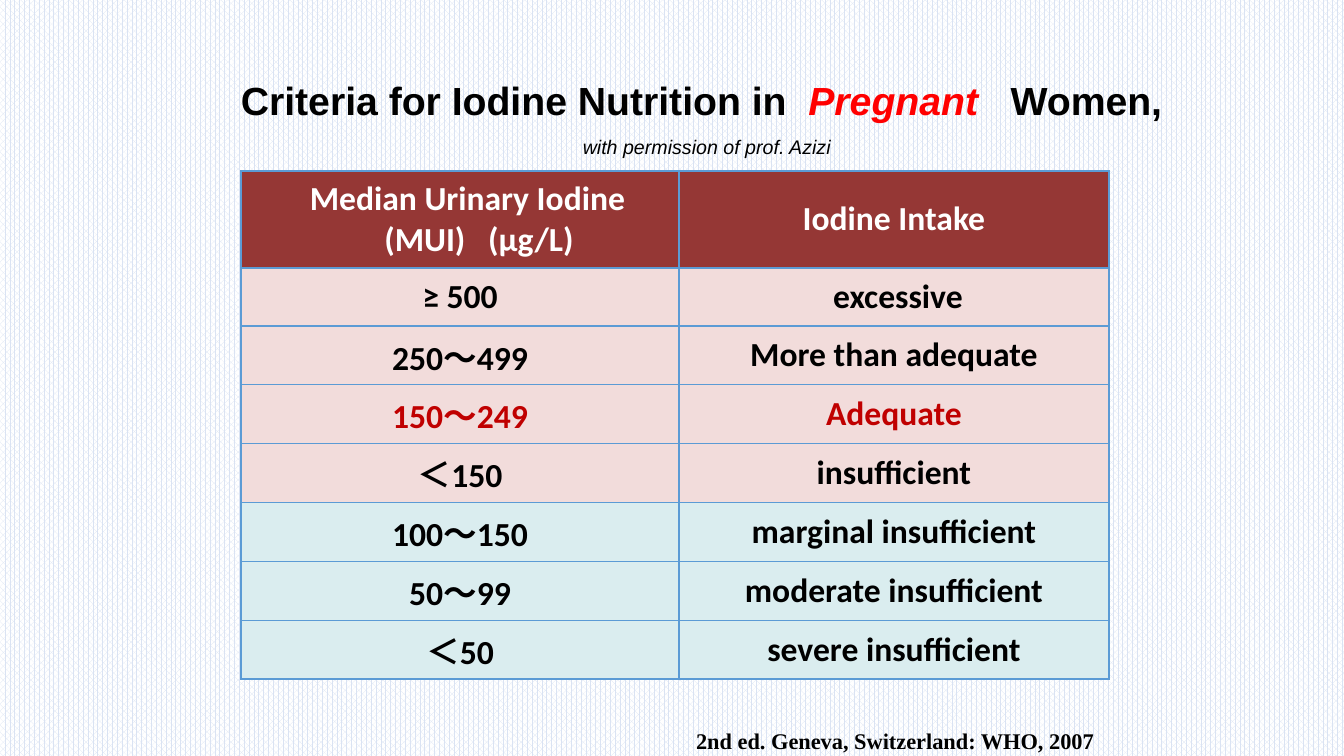
from lxml.etree import SubElement
from pptx import Presentation
from pptx.dml.color import RGBColor
from pptx.enum.dml import MSO_PATTERN
from pptx.enum.text import MSO_ANCHOR, MSO_AUTO_SIZE, PP_ALIGN
from pptx.oxml.ns import qn
from pptx.util import Pt

COLORS = {
    "black": "000000", "white": "FFFFFF", "red": "FF0000", "crimson": "C00000",
    "stripe": "DAE3F3", "header": "953735", "pink": "F2DCDB", "teal": "DAEDEF",
    "border": "5B9BD5",
}
HANG = 38
ROWS = [
    ("≥ 500", "excessive", "pink", "black", (0, 0), (HANG, -30)),
    ("250～499", "More than adequate", "pink", "black", (0, 0), (HANG, -HANG)),
    ("150～249", "Adequate", "pink", "crimson", (0, 0), (HANG, -HANG)),
    ("＜150", "insufficient", "pink", "black", (0, 0), (HANG, -HANG)),
    ("100～150", "marginal insufficient", "teal", "black", (0, 0), (HANG, -HANG)),
    ("50～99", "moderate insufficient", "teal", "black", (HANG, -HANG), (HANG, -HANG)),
    ("＜50", "severe insufficient", "teal", "black", (HANG, -HANG), (HANG, -HANG)),
]
HEADER = ("Median Urinary Iodine (MUI)   (µg/L)", "Iodine Intake",
          "header", "white", (HANG, -23), (HANG, -HANG))


def px(n):
    return round(n * 914400 / 100.8)


def rgb(name):
    return RGBColor.from_string(COLORS[name])


class SlideBuilder:
    """Draws styled elements on one slide."""

    def __init__(self, prs):
        self.s = prs.slides.add_slide(prs.slide_layouts[6])

    def background(self):
        fill = self.s.background.fill
        fill.patterned()
        fill.pattern = MSO_PATTERN.PERCENT_70
        fill.fore_color.rgb = rgb("stripe")
        fill.back_color.rgb = rgb("white")

    def run(self, p, text, font, size, color="black", bold=True, italic=False):
        r = p.add_run()
        r.text = text
        r.font.name = font
        r.font.size = Pt(size)
        r.font.bold = bold
        r.font.italic = italic
        r.font.color.rgb = rgb(color)

    def text(self, box, paragraphs, align, spacing=None):
        tf = self.s.shapes.add_textbox(*map(px, box)).text_frame
        tf.word_wrap = True
        tf.auto_size = MSO_AUTO_SIZE.SHAPE_TO_FIT_TEXT
        for i, runs in enumerate(paragraphs):
            p = tf.add_paragraph() if i else tf.paragraphs[0]
            p.alignment = align
            p.line_spacing = spacing
            for args in runs:
                self.run(p, *args)

    def cell(self, cell, text, fill, color, indent):
        cell.vertical_anchor = MSO_ANCHOR.MIDDLE
        tcPr = cell._tc.get_or_add_tcPr()
        for side in ("lnL", "lnR", "lnT", "lnB"):
            ln = SubElement(tcPr, qn(f"a:{side}"), w=str(Pt(1)))
            solid = SubElement(ln, qn("a:solidFill"))
            SubElement(solid, qn("a:srgbClr"), val=COLORS["border"])
        cell.fill.solid()
        cell.fill.fore_color.rgb = rgb(fill)
        p = cell.text_frame.paragraphs[0]
        p.alignment = PP_ALIGN.CENTER
        pPr = p._p.get_or_add_pPr()
        pPr.set("marL", str(px(indent[0])))
        pPr.set("indent", str(px(indent[1])))
        self.run(p, text, "Calibri", 24, color)

    def table(self, box, widths, header_height, row_height, rows):
        tbl = self.s.shapes.add_table(len(rows), len(widths), *map(px, box)).table
        for col, width in zip(tbl.columns, widths):
            col.width = px(width)
        for i, (left, right, fill, color, *indents) in enumerate(rows):
            tbl.rows[i].height = px(row_height if i else header_height)
            for j, text in enumerate((left, right)):
                self.cell(tbl.cell(i, j), text, fill, color, indents[j])


def main():
    prs = Presentation()
    prs.slide_width, prs.slide_height = px(1344), px(756)
    slide = SlideBuilder(prs)
    slide.background()
    slide.table((241, 171, 868, 503), (438, 430), 97, 58, [HEADER] + ROWS)
    slide.text((569, 722, 535, 37),
               [[("2nd ed. Geneva, Switzerland: WHO, 2007", "Times New Roman", 16)]],
               PP_ALIGN.RIGHT)
    slide.text((-181, 48, 1776, 117), [
        [("Criteria for Iodine Nutrition in  ", "Arial", 28),
         ("Pregnant", "Arial", 28, "red", True, True),
         ("   Women, ", "Arial", 28)],
        [("with permission of prof. Azizi", "Arial", 14, "black", False, True)],
    ], PP_ALIGN.CENTER, 1.5)
    prs.save("out.pptx")


if __name__ == "__main__":
    main()
